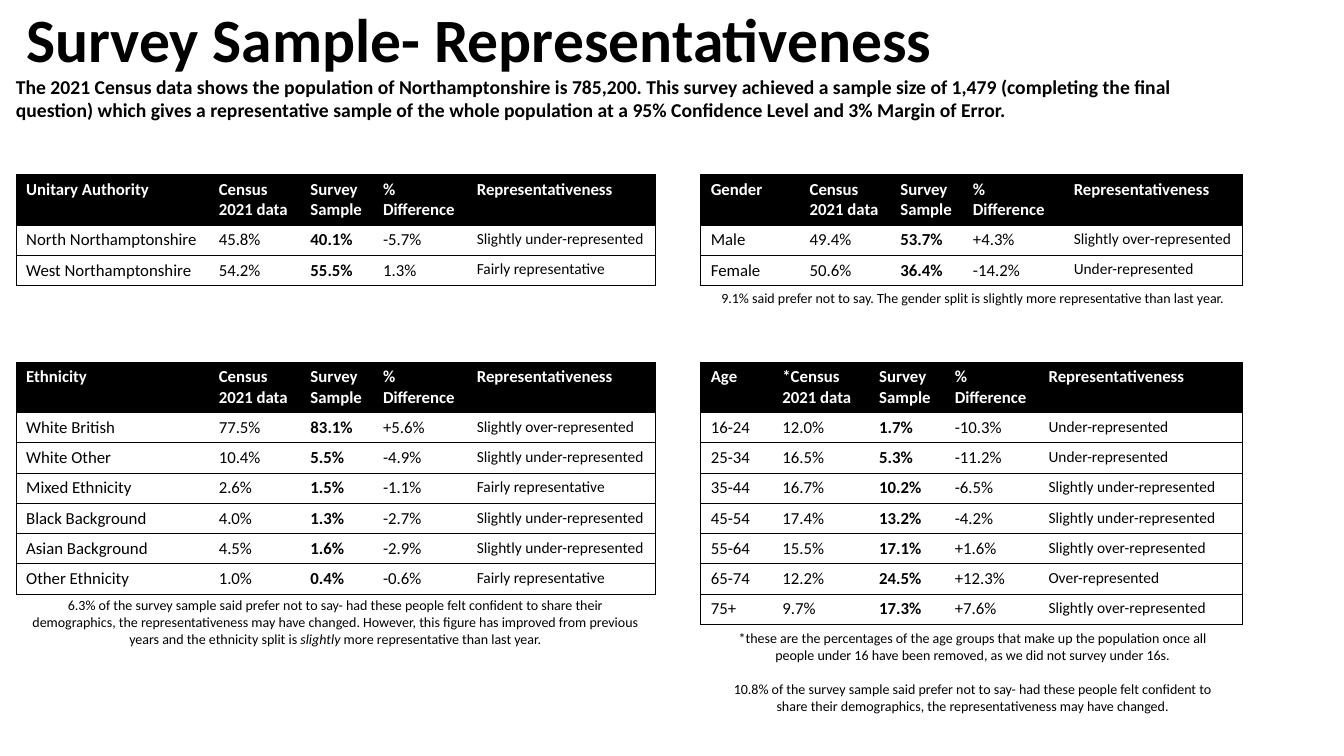
"""Build the survey sample representativeness slide."""
from lxml.etree import SubElement
from pptx import Presentation
from pptx.dml.color import RGBColor
from pptx.enum.text import MSO_ANCHOR as Anchor, MSO_AUTO_SIZE as AutoSize, PP_ALIGN as Align
from pptx.oxml.ns import qn
from pptx.util import Pt

PX = 9144
THEME = {
    "font": "Calibri", "ink": "000000", "paper": "FFFFFF",
    "title": 44, "intro": 14, "cell": 12, "verdict": 11, "note": 10,
    "border": 0.5, "table_style": "{2D5ABB26-0587-4C30-8999-92F81FD0307C}",
}
HEADER_HEIGHT, ROW_HEIGHT = 50, 30


def style(paragraph, size, bold=False, color="ink"):
    font = paragraph.font
    font.name, font.size, font.bold = THEME["font"], Pt(THEME[size]), bold
    font.color.rgb = RGBColor.from_string(THEME[color])


def add_text(box, paragraphs, size, bold=False, align=Align.LEFT):
    shape = slide.shapes.add_textbox(*(length * PX for length in box))
    frame = shape.text_frame
    frame.word_wrap, frame.auto_size = True, AutoSize.SHAPE_TO_FIT_TEXT
    for index, runs in enumerate(paragraphs):
        paragraph = frame.add_paragraph() if index else frame.paragraphs[0]
        if index:
            paragraph.space_before = Pt(12)
        for text, italic in runs:
            run = paragraph.add_run()
            run.text = text
            if italic:
                run.font.italic = True
        paragraph.alignment = align
        style(paragraph, size, bold)
    return frame


presentation = Presentation()
presentation.slide_width, presentation.slide_height = 1333 * PX, 750 * PX
slide = presentation.slides.add_slide(presentation.slide_layouts[6])

title = add_text((16, 0, 1132, 85), [[("Survey Sample- Representativeness", False)]], "title", True)
title.auto_size = AutoSize.NONE
title.vertical_anchor = Anchor.MIDDLE
title.paragraphs[0].line_spacing = 0.9

add_text((6, 69, 1227, 57), [[(
    "The 2021 Census data shows the population of Northamptonshire is 785,200. This survey "
    "achieved a sample size of 1,479 (completing the final question) which gives a "
    "representative sample of the whole population at a 95% Confidence Level and 3% Margin "
    "of Error.", False)]], "intro", True)

UNDER, OVER = "Under-represented", "Over-represented"
SLIGHTLY_UNDER, SLIGHTLY_OVER = "Slightly under-represented", "Slightly over-represented"
FAIR = "Fairly representative"
LEFT_COLUMNS = (191, 91, 72, 93, 187)

tables = [
    (695, 173, (98, 90, 72, 100, 177), "Gender", "Census 2021 data", [
        ("Male", "49.4%", "53.7%", "+4.3%", SLIGHTLY_OVER),
        ("Female", "50.6%", "36.4%", "-14.2%", UNDER),
    ]),
    (16, 173, LEFT_COLUMNS, "Unitary Authority", "Census 2021 data", [
        ("North Northamptonshire", "45.8%", "40.1%", "-5.7%", SLIGHTLY_UNDER),
        ("West Northamptonshire", "54.2%", "55.5%", "1.3%", FAIR),
    ]),
    (16, 359, LEFT_COLUMNS, "Ethnicity", "Census 2021 data", [
        ("White British", "77.5%", "83.1%", "+5.6%", SLIGHTLY_OVER),
        ("White Other", "10.4%", "5.5%", "-4.9%", SLIGHTLY_UNDER),
        ("Mixed Ethnicity", "2.6%", "1.5%", "-1.1%", FAIR),
        ("Black Background", "4.0%", "1.3%", "-2.7%", SLIGHTLY_UNDER),
        ("Asian Background", "4.5%", "1.6%", "-2.9%", SLIGHTLY_UNDER),
        ("Other Ethnicity", "1.0%", "0.4%", "-0.6%", FAIR),
    ]),
    (695, 359, (71, 96, 75, 93, 202), "Age", "*Census 2021 data", [
        ("16-24", "12.0%", "1.7%", "-10.3%", UNDER),
        ("25-34", "16.5%", "5.3%", "-11.2%", UNDER),
        ("35-44", "16.7%", "10.2%", "-6.5%", SLIGHTLY_UNDER),
        ("45-54", "17.4%", "13.2%", "-4.2%", SLIGHTLY_UNDER),
        ("55-64", "15.5%", "17.1%", "+1.6%", SLIGHTLY_OVER),
        ("65-74", "12.2%", "24.5%", "+12.3%", OVER),
        ("75+", "9.7%", "17.3%", "+7.6%", SLIGHTLY_OVER),
    ]),
]

for left, top, widths, group, census, body in tables:
    rows = [(group, census, "Survey Sample", "% Difference", "Representativeness"), *body]
    height = HEADER_HEIGHT + ROW_HEIGHT * len(body)
    frame = slide.shapes.add_table(
        len(rows), len(widths), left * PX, top * PX, sum(widths) * PX, height * PX)
    table = frame.table
    table.horz_banding = False
    table._tbl.tblPr.find(qn("a:tableStyleId")).text = THEME["table_style"]
    for column, width in zip(table.columns, widths):
        column.width = width * PX
    for row_index, values in enumerate(rows):
        header = row_index == 0
        table.rows[row_index].height = (HEADER_HEIGHT if header else ROW_HEIGHT) * PX
        for column_index, value in enumerate(values):
            last = column_index == len(widths) - 1
            cell = table.cell(row_index, column_index)
            cell.text = value
            style(cell.text_frame.paragraphs[0],
                  "verdict" if last and not header else "cell",
                  header or column_index == 2, "paper" if header else "ink")
            properties = cell._tc.get_or_add_tcPr()
            sides = ["L"] * (column_index == 0) + ["R"] * last + ["T", "B"]
            for side in sides:
                line = SubElement(properties, qn(f"a:ln{side}"), w=str(Pt(THEME["border"])))
                line_fill = SubElement(line, qn("a:solidFill"))
                SubElement(line_fill, qn("a:srgbClr"), val=THEME["ink"])
            cell.fill.solid()
            cell.fill.fore_color.rgb = RGBColor.from_string(THEME["ink" if header else "paper"])

notes = [
    ((696, 282, 537, 27), [[(
        "9.1% said prefer not to say. The gender split is slightly more representative than "
        "last year.", False)]]),
    ((16, 587, 633, 61), [[
        ("6.3% of the survey sample said prefer not to say- had these people felt confident to "
         "share their demographics, the representativeness may have changed. However, this "
         "figure has improved from previous years and the ethnicity split is ", False),
        ("slightly", True),
        (" more representative than last year.", False)]]),
    ((717, 620, 495, 94), [
        [("*these are the percentages of the age groups that make up the population once all "
          "people under 16 have been removed, as we did not survey under 16s.", False)],
        [("10.8% of the survey sample said prefer not to say- had these people felt confident "
          "to share their demographics, the representativeness may have changed.", False)]]),
]
for box, paragraphs in notes:
    add_text(box, paragraphs, "note", align=Align.CENTER)

presentation.save("out.pptx")
